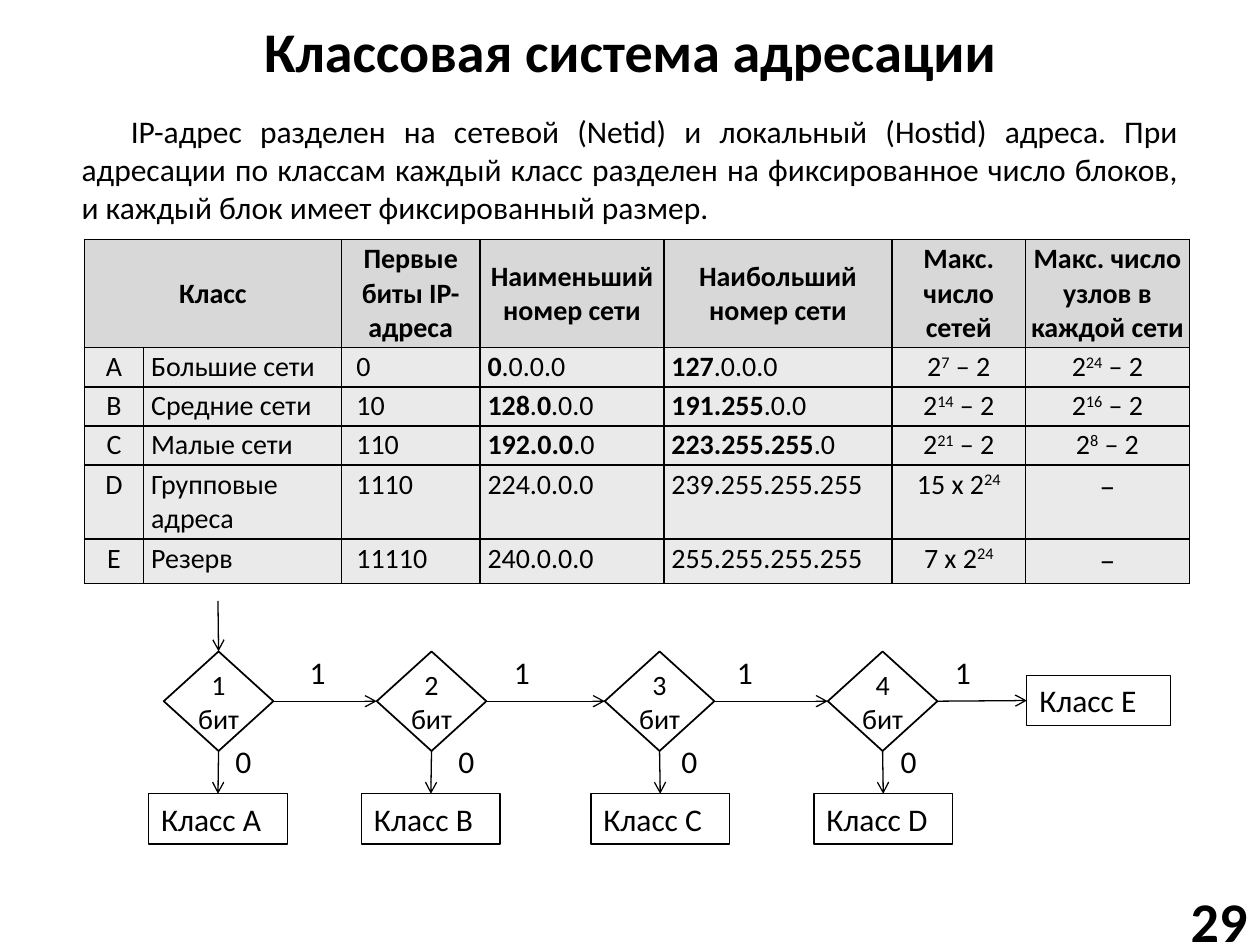
from lxml import etree
from pptx import Presentation
from pptx.dml.color import RGBColor
from pptx.enum.shapes import MSO_CONNECTOR, MSO_SHAPE
from pptx.enum.text import MSO_ANCHOR, PP_ALIGN
from pptx.oxml import parse_xml
from pptx.oxml.ns import nsdecls, qn
from pptx.util import Inches, Pt

BLACK = RGBColor(0x00, 0x00, 0x00)
WHITE = RGBColor(0xFF, 0xFF, 0xFF)
HEADER_GRAY = RGBColor(0xD8, 0xD8, 0xD8)
BODY_GRAY = RGBColor(0xEA, 0xEA, 0xEA)
FONT = "Calibri"
LEFT, CENTER, RIGHT = PP_ALIGN.LEFT, PP_ALIGN.CENTER, PP_ALIGN.RIGHT
JUSTIFY = PP_ALIGN.JUSTIFY
MIDDLE, TOP = MSO_ANCHOR.MIDDLE, MSO_ANCHOR.TOP
STRAIGHT = MSO_CONNECTOR.STRAIGHT
DECISION = MSO_SHAPE.FLOWCHART_DECISION

prs = Presentation()
prs.slide_width, prs.slide_height = Inches(10), Inches(7.5)
s = prs.slides.add_slide(prs.slide_layouts[5])


def write(tf, text, size=18, bold=False, align=LEFT, anchor=TOP):
    """Write one paragraph; *...* marks bold and ^...^ superscript."""
    tf.word_wrap = True
    tf.vertical_anchor = anchor
    p = tf.paragraphs[0]
    p.alignment = align
    for i, chunk in enumerate(text.split("*")):
        for j, piece in enumerate(chunk.split("^")):
            if not piece:
                continue
            r = p.add_run()
            r.text = piece
            r.font.name, r.font.size = FONT, Pt(size)
            r.font.bold = bold or i % 2 == 1
            r.font.color.rgb = BLACK
            if j % 2:
                r.font._element.set("baseline", "30000")
    return p


def add_arrow(x1, y1, x2, y2, start=None, end=None):
    """Draw an arrow; start and end are (shape, connection site) pairs."""
    line = s.shapes.add_connector(
        STRAIGHT, Inches(x1), Inches(y1), Inches(x2), Inches(y2))
    if start:
        line.begin_connect(*start)
    if end:
        line.end_connect(*end)
    line.line.color.rgb = BLACK
    line.line.width = Pt(0.75)
    etree.SubElement(line.line._get_or_add_ln(), qn("a:tailEnd"), type="arrow")
    etree.SubElement(line._element.spPr, qn("a:effectLst"))


# Title
title = s.shapes.title
title.left, title.top = Inches(0.28), Inches(0.05)
title.width, title.height = Inches(9.45), Inches(0.69)
write(title.text_frame, "Классовая система адресации", 32, True, CENTER, MIDDLE)

# Slide number
number = s.shapes.add_textbox(Inches(8.86), Inches(7.1), Inches(1.14), Inches(0.4))
write(number.text_frame, "29", 32, True, RIGHT, MIDDLE)

# Introduction
intro = s.shapes.add_textbox(Inches(0.55), Inches(0.84), Inches(8.9), Inches(1.01))
p = write(
    intro.text_frame,
    "IP-адрес разделен на сетевой (Netid) и локальный (Hostid) адреса. "
    "При адресации по классам каждый класс разделен на фиксированное число "
    "блоков, и каждый блок имеет фиксированный размер.",
    align=JUSTIFY)
p._p.get_or_add_pPr().set("indent", str(Inches(0.39)))

# Table of address classes
col_widths = [0.47, 1.57, 1.1, 1.46, 1.81, 1.06, 1.3]
row_heights = [0.86, 0.31, 0.31, 0.31, 0.59, 0.35]
col_indents = [0, 0.04, 0.1, 0.04, 0.04, 0, 0]
rows = [
    ["Класс", "", "Первые биты IP-адреса", "Наименьший номер сети",
     "Наибольший номер сети", "Макс. число сетей",
     "Макс. число узлов в каждой сети"],
    ["A", "Большие сети", "0", "*0*.0.0.0", "*127*.0.0.0", "2^7^ – 2", "2^24^ – 2"],
    ["B", "Средние сети", "10", "*128*.*0*.0.0", "*191.255*.0.0",
     "2^14^ – 2", "2^16^ – 2"],
    ["C", "Малые сети", "110", "*192.0.0*.0", "*223.255.255*.0",
     "2^21^ – 2", "2^8^ – 2"],
    ["D", "Групповые адреса", "1110", "224.0.0.0", "239.255.255.255",
     "15 x 2^24^", "–"],
    ["E", "Резерв", "11110", "240.0.0.0", "255.255.255.255", "7 x 2^24^", "–"],
]
table = s.shapes.add_table(
    len(rows), len(col_widths), Inches(0.67), Inches(1.9),
    Inches(sum(col_widths)), Inches(sum(row_heights))).table
table.first_row = table.horz_banding = False
for col, width in zip(table.columns, col_widths):
    col.width = Inches(width)
for row, height in zip(table.rows, row_heights):
    row.height = Inches(height)
table.cell(0, 0).merge(table.cell(0, 1))

for i, row in enumerate(rows):
    header = i == 0
    for j, text in enumerate(row):
        cell = table.cell(i, j)
        cell.margin_left = cell.margin_right = Inches(0.02)
        cell.margin_top = cell.margin_bottom = Inches(0.02)
        cell.vertical_anchor = MIDDLE if header else TOP
        for side in ("lnL", "lnR", "lnT", "lnB"):
            cell._tc.get_or_add_tcPr().append(parse_xml(
                f'<a:{side} {nsdecls("a")} w="{Pt(1)}"><a:solidFill>'
                f'<a:srgbClr val="{BLACK}"/></a:solidFill></a:{side}>'))
        cell.fill.solid()
        cell.fill.fore_color.rgb = HEADER_GRAY if header else BODY_GRAY
        indent = 0 if header else col_indents[j]
        p = write(cell.text_frame, text, 18 if text == "–" else 16, header,
                  LEFT if indent else CENTER)
        p._p.get_or_add_pPr().set("marL", str(Inches(indent)))

# Decisions on each bit
decisions = []
for i, x in enumerate([1.3, 2.99, 4.8, 6.57]):
    sp = s.shapes.add_shape(
        DECISION, Inches(x), Inches(5.17), Inches(0.87), Inches(0.79))
    sp.shadow.inherit = False
    sp.fill.solid()
    sp.fill.fore_color.rgb = WHITE
    sp.line.color.rgb = BLACK
    sp.line.width = Pt(1)
    tf = sp.text_frame
    tf.margin_left = tf.margin_right = tf.margin_top = tf.margin_bottom = 0
    write(tf, f"{i + 1} бит", 16, align=CENTER, anchor=MIDDLE)
    decisions.append(sp)

# Resulting classes
results = []
for name, x, y, width in [("A", 1.18, 6.3, 1.1), ("B", 2.87, 6.3, 1.1),
                          ("C", 4.69, 6.3, 1.1), ("D", 6.46, 6.3, 1.1),
                          ("E", 8.15, 5.36, 1.14)]:
    sp = s.shapes.add_textbox(Inches(x), Inches(y), Inches(width), Inches(0.4))
    sp.line.color.rgb = BLACK
    sp.line.width = Pt(0.75)
    write(sp.text_frame, f"Класс {name}")
    results.append(sp)

# Arrows: entry, then right on 1 and down on 0
add_arrow(1.73, 4.77, 1.73, 5.17, end=(decisions[0], 0))
for sp, following, result in zip(decisions, decisions[1:] + results[-1:], results):
    add_arrow(0, 0, 0, 0, (sp, 3), (following, 1))
    add_arrow(0, 0, 0, 0, (sp, 2), (result, 0))

# Bit values beside the arrows
for bit, y, lefts in [("1", 5.13, [2.36, 3.98, 5.75, 7.48]),
                      ("0", 5.84, [1.77, 3.54, 5.31, 7.05])]:
    for x in lefts:
        label = s.shapes.add_textbox(Inches(x), Inches(y), Inches(0.55), Inches(0.4))
        write(label.text_frame, bit)

prs.save("out.pptx")
